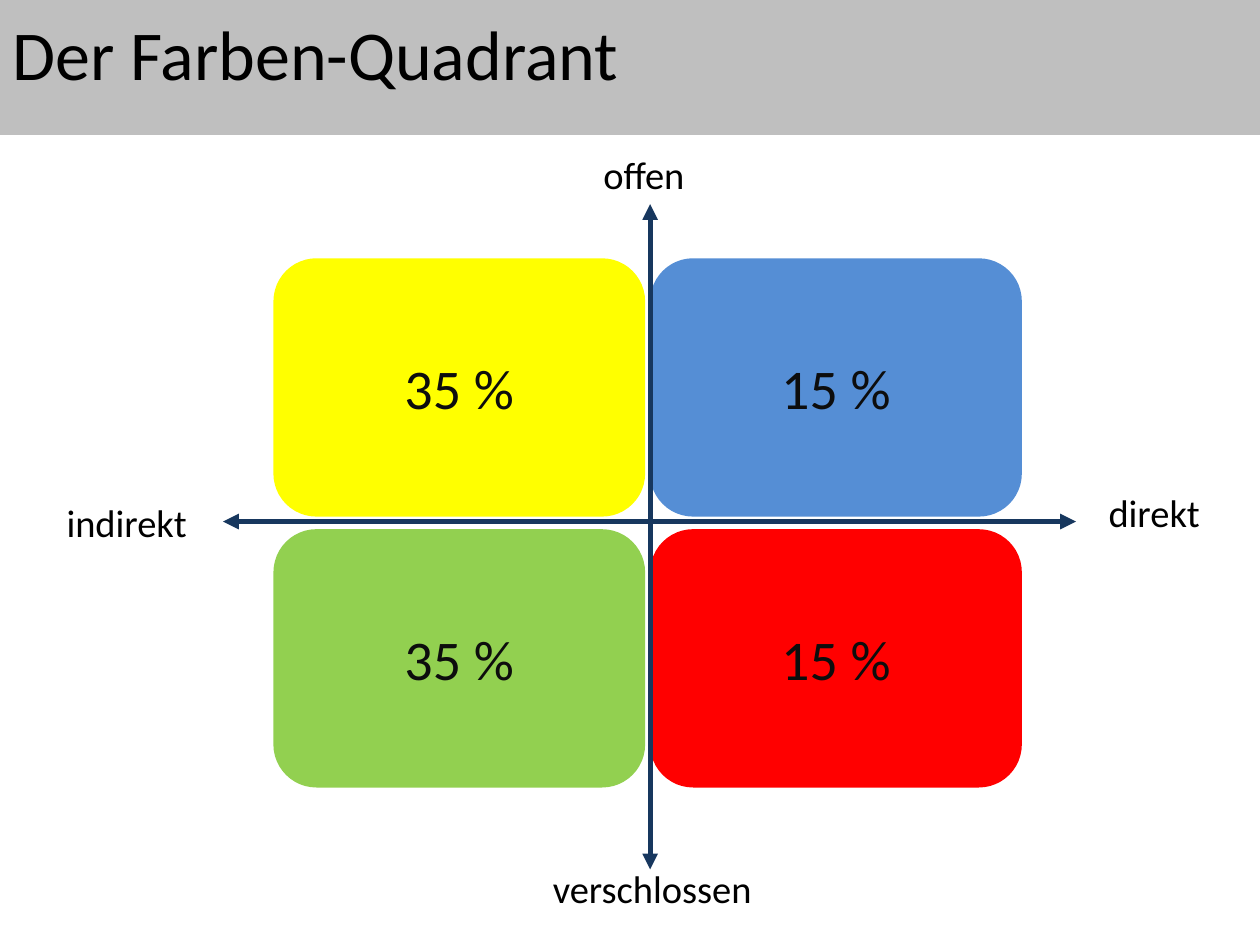
from lxml import etree
from pptx import Presentation
from pptx.dml.color import RGBColor
from pptx.enum.shapes import MSO_CONNECTOR, MSO_SHAPE
from pptx.enum.text import MSO_ANCHOR, MSO_AUTO_SIZE, PP_ALIGN
from pptx.oxml.ns import qn
from pptx.util import Inches, Pt

ROUNDED, STRAIGHT = MSO_SHAPE.ROUNDED_RECTANGLE, MSO_CONNECTOR.STRAIGHT
LEFT, CENTER, MIDDLE = PP_ALIGN.LEFT, PP_ALIGN.CENTER, MSO_ANCHOR.MIDDLE
FIT, NO_FIT = MSO_AUTO_SIZE.SHAPE_TO_FIT_TEXT, MSO_AUTO_SIZE.NONE

TITLE = "Der Farben-Quadrant"
QUADRANTS = [
    [("35 %", "FFFF00"), ("15 %", "558ED5")],
    [("35 %", "92D050"), ("15 %", "FF0000")],
]
AXES = [(5.16, 1.62, 5.16, 6.9), (1.77, 4.14, 8.54, 4.14)]
LABELS = [
    ("offen", 4.69, 1.15, 0.86),
    ("verschlossen", 4.29, 6.82, 1.8),
    ("indirekt", 0.43, 3.91, 1.16),
    ("direkt", 8.7, 3.83, 0.93),
]
GRID_X, GRID_Y = 2.17, 2.05
BOX_W, BOX_H = 2.95, 2.05
STEP_X, STEP_Y = 2.99, 2.15
LABEL_H = 0.47


def rgb(color):
    return RGBColor.from_string(color)


def fill(shape, color):
    shape.fill.solid()
    shape.fill.fore_color.rgb = rgb(color)


def write(shape, text, size, color="000000", align=LEFT):
    p = shape.text_frame.paragraphs[0]
    p.text = text
    p.alignment = align
    p.font.name = "Calibri"
    p.font.size = Pt(size)
    p.font.color.rgb = rgb(color)


def add_title(s):
    title = s.shapes.title
    title.left, title.top = Inches(0), Inches(-0.23)
    title.width, title.height = Inches(10.28), Inches(1.3)
    fill(title, "BFBFBF")
    title.text_frame.vertical_anchor = MIDDLE
    title.text_frame.auto_size = NO_FIT
    write(title, TITLE, 40)


def add_quadrant(s, row, col, text, color):
    x, y = GRID_X + col * STEP_X, GRID_Y + row * STEP_Y
    box = s.shapes.add_shape(ROUNDED, Inches(x), Inches(y), Inches(BOX_W), Inches(BOX_H))
    box.shadow.inherit = False
    box.line.fill.background()
    fill(box, color)
    box.text_frame.vertical_anchor = MIDDLE
    write(box, text, 32, "0D0D0D", CENTER)


def add_axis(s, ends):
    axis = s.shapes.add_connector(STRAIGHT, *map(Inches, ends))
    axis.line.color.rgb = rgb("17375E")
    axis.line.width = Pt(3)
    ln = axis.line._get_or_add_ln()
    for end in ("a:headEnd", "a:tailEnd"):
        etree.SubElement(ln, qn(end), type="triangle")
    etree.SubElement(ln.getparent(), qn("a:effectLst"))


def add_label(s, text, x, y, w):
    label = s.shapes.add_textbox(Inches(x), Inches(y), Inches(w), Inches(LABEL_H))
    label.text_frame.word_wrap = False
    label.text_frame.auto_size = FIT
    write(label, text, 22)


def main():
    prs = Presentation()
    prs.slide_width, prs.slide_height = Inches(10), Inches(7.5)
    s = prs.slides.add_slide(prs.slide_layouts[5])
    add_title(s)
    for row, cells in enumerate(QUADRANTS):
        for col, (text, color) in enumerate(cells):
            add_quadrant(s, row, col, text, color)
    for ends in AXES:
        add_axis(s, ends)
    for label in LABELS:
        add_label(s, *label)
    prs.save("out.pptx")


if __name__ == "__main__":
    main()
